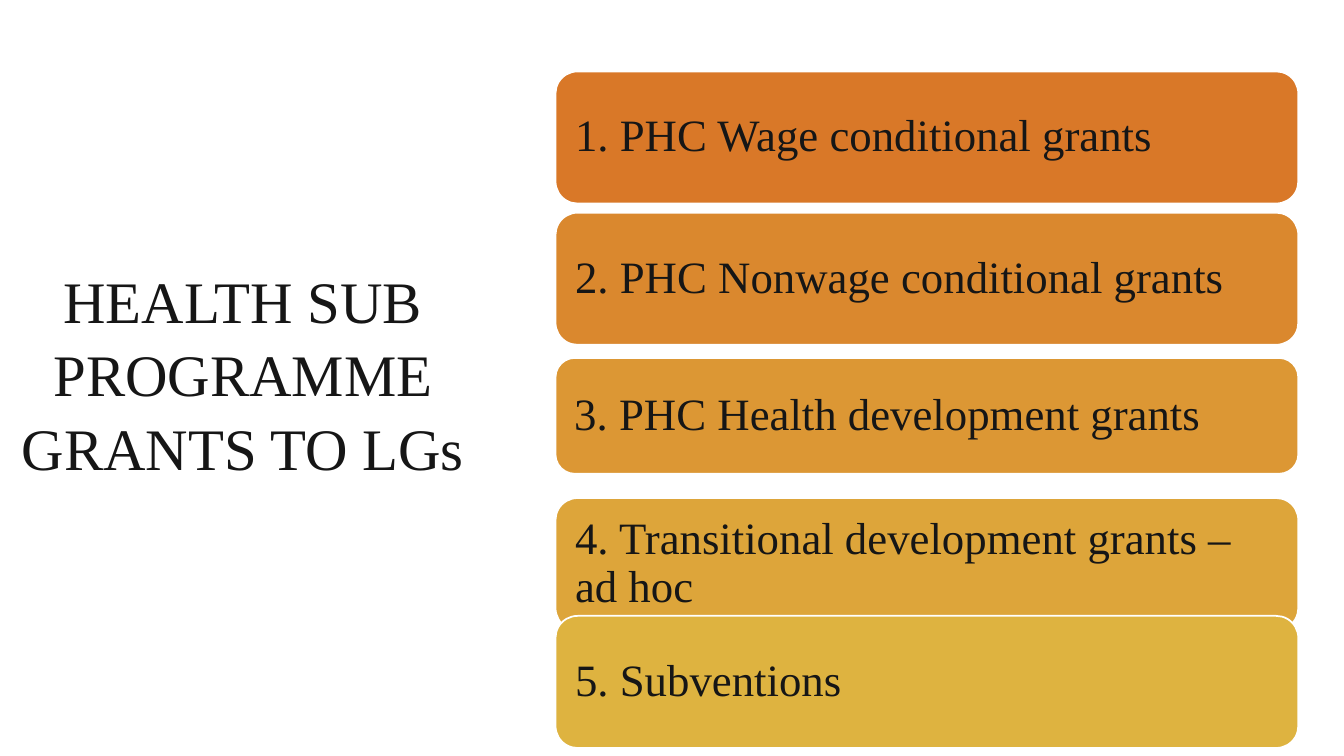
from dataclasses import dataclass

from pptx import Presentation
from pptx.dml.color import RGBColor
from pptx.enum.shapes import MSO_SHAPE
from pptx.enum.text import MSO_ANCHOR, MSO_AUTO_SIZE, PP_ALIGN
from pptx.slide import Slide
from pptx.text.text import TextFrame
from pptx.util import Cm, Pt

FONT = "Times New Roman"
INK = RGBColor(0x16, 0x16, 0x16)
WHITE = RGBColor(0xFF, 0xFF, 0xFF)
RUST = RGBColor(0xD9, 0x78, 0x28)
ORANGE = RGBColor(0xDA, 0x88, 0x2E)
AMBER = RGBColor(0xDC, 0x97, 0x34)
HONEY = RGBColor(0xDD, 0xA5, 0x3A)
GOLD = RGBColor(0xDE, 0xB3, 0x40)


@dataclass
class Grant:
    label: str
    top: float
    fill: RGBColor
    height: float = 3.33


GRANTS = [
    Grant("1. PHC Wage conditional grants", 1.8, RUST),
    Grant("2. PHC Nonwage conditional grants", 5.36, ORANGE),
    Grant("3. PHC Health development grants", 9.02, AMBER, 2.92),
    Grant("4. Transitional development grants – ad hoc", 12.55, HONEY),
    Grant("5. Subventions", 15.52, GOLD),
]


def write(frame: TextFrame, text: str, size: int, align: PP_ALIGN, pitch: float) -> None:
    frame.word_wrap = True
    frame.auto_size = MSO_AUTO_SIZE.NONE
    frame.vertical_anchor = MSO_ANCHOR.MIDDLE
    para = frame.paragraphs[0]
    para.alignment = align
    para.line_spacing = pitch
    run = para.add_run()
    run.text = text
    run.font.name = FONT
    run.font.size = Pt(size)
    run.font.color.rgb = INK


def draw_title(slide: Slide) -> None:
    title = slide.shapes.title
    title.left, title.top = Cm(0.2), Cm(1.73)
    title.width, title.height = Cm(11.84), Cm(15.29)
    write(title.text_frame, "HEALTH SUB PROGRAMME GRANTS TO LGs", 42, PP_ALIGN.CENTER, 1.04)


def draw_grant(slide: Slide, grant: Grant) -> None:
    card = slide.shapes.add_shape(
        MSO_SHAPE.ROUNDED_RECTANGLE, Cm(14), Cm(grant.top), Cm(18.72), Cm(grant.height)
    )
    card.shadow.inherit = False
    card.fill.solid()
    card.fill.fore_color.rgb = grant.fill
    card.line.color.rgb = WHITE
    card.line.width = Pt(1.25)
    frame = card.text_frame
    frame.margin_left = frame.margin_right = Cm(0.33)
    frame.margin_top = frame.margin_bottom = Cm(0.33)
    write(frame, grant.label, 32, PP_ALIGN.LEFT, 0.9)


def main() -> None:
    deck = Presentation()
    deck.slide_width, deck.slide_height = Cm(33.87), Cm(19.05)
    slide = deck.slides.add_slide(deck.slide_layouts.get_by_name("Title Only"))
    draw_title(slide)
    for grant in GRANTS:
        draw_grant(slide, grant)
    deck.save("out.pptx")


if __name__ == "__main__":
    main()
